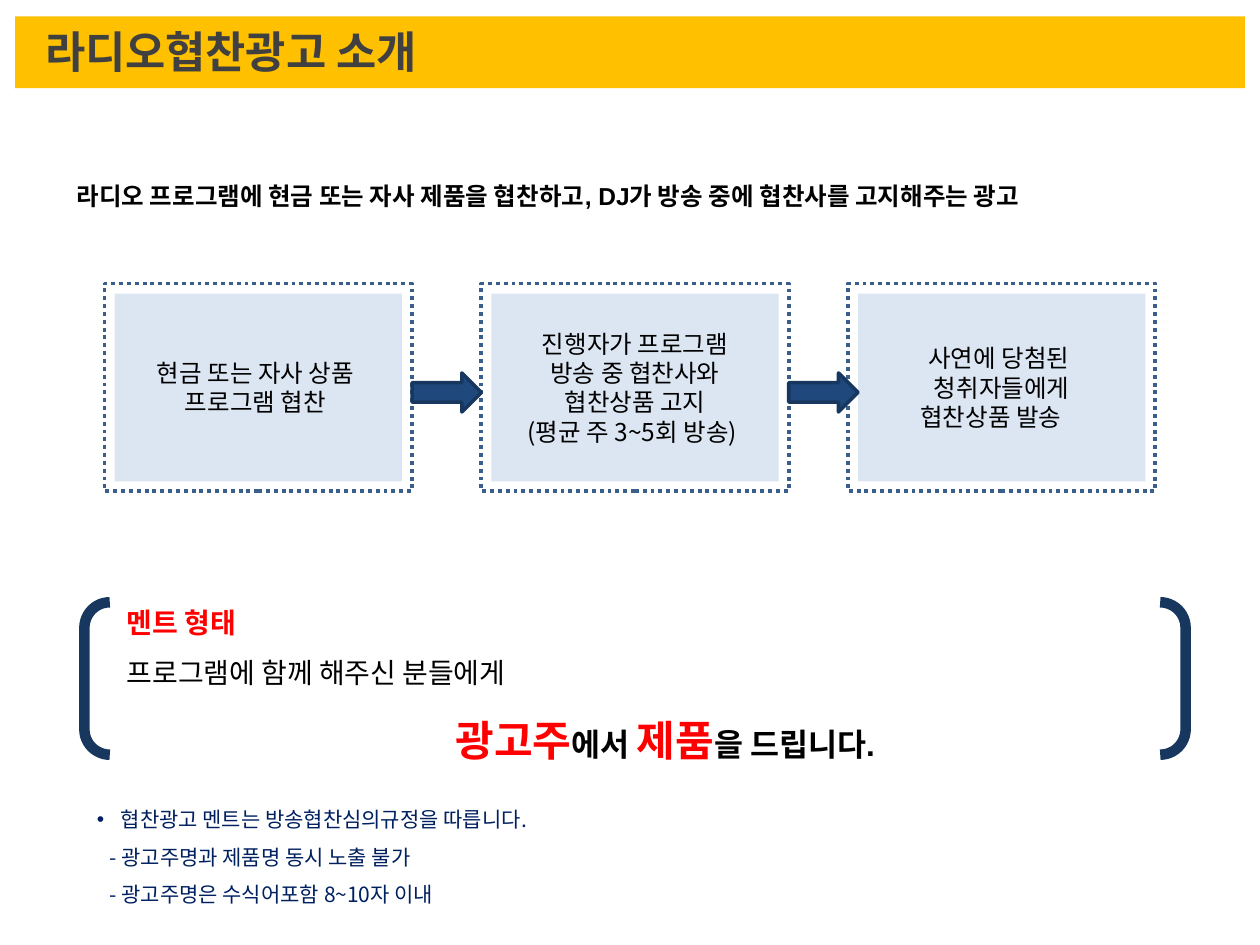
from pptx import Presentation, util as u
from pptx.dml.color import RGBColor
from pptx.enum import dml, shapes, text
from pptx.oxml import parse_xml
from pptx.oxml.ns import nsdecls

CELL = u.Inches(0.1)  # the slide is a grid of 100 columns by 75 rows
KOREAN, LATIN = "Noto Sans CJK KR", "Arial"
color = RGBColor.from_string

deck = Presentation()
deck.slide_width, deck.slide_height = 100 * CELL, 75 * CELL
slide = deck.slides.add_slide(deck.slide_layouts[6])


def add_block(kind, area, fill=None, line=None, width=1):
    block = slide.shapes.add_shape(kind, *[round(n * CELL) for n in area])
    block.shadow.inherit = False
    if fill:
        block.fill.solid()
        block.fill.fore_color.rgb = color(fill)
    else:
        block.fill.background()
    if line:
        block.line.color.rgb = color(line)
        block.line.width = u.Pt(width)
    else:
        block.line.fill.background()
    return block


def write(frame, lines, font=KOREAN, align="LEFT", spacing=None):
    """Each line is a list of runs: (words, size, colour, bold)."""
    frame.word_wrap = True
    for i, runs in enumerate(lines):
        line = frame.paragraphs[0] if i == 0 else frame.add_paragraph()
        line.alignment = getattr(text.PP_ALIGN, align)
        line.line_spacing = spacing
        for words, size, hue, bold in runs:
            run = line.add_run()
            run.text = words
            run.font.size, run.font.bold = u.Pt(size), bold
            run.font.color.rgb = color(hue)
            run.font.name = font
            run.font._element.append(
                parse_xml(f'<a:ea {nsdecls("a")} typeface="{KOREAN}"/>'))
    return frame.paragraphs


# Title bar
add_block(shapes.MSO_SHAPE.RECTANGLE, (1.2, 1.3, 97.6, 5.7), "FFC000")
title = slide.shapes.add_textbox(*[round(n * CELL) for n in (1.6, 1.5, 79.5, 5.2)])
title_line = write(title.text_frame, [[("라디오협찬광고 소개", 25, "404040", True)]])[0]
title_line._p.get_or_add_pPr().set("marL", str(CELL))

# Three steps, each a panel inside a dotted frame
STEP_TOP, STEP_WIDTH, STEP_HEIGHT, INSET = 22.5, 24.4, 16.5, 0.8
steps = [
    (8.3, ["현금 또는 자사 상품 ", "프로그램 협찬 "]),
    (38.2, ["진행자가 프로그램", "방송 중 협찬사와", "협찬상품 고지",
            "(평균 주 3~5회 방송) "]),
    (67.3, ["사연에 당첨된 ", "청취자들에게", "협찬상품 발송"]),
]
for left, words in steps:
    panel = add_block(
        shapes.MSO_SHAPE.RECTANGLE,
        (left + INSET, STEP_TOP + INSET, STEP_WIDTH - 2 * INSET, STEP_HEIGHT - 2 * INSET),
        "DCE6F2")
    panel.text_frame.vertical_anchor = text.MSO_ANCHOR.MIDDLE
    step_lines = write(panel.text_frame, [[(w, 14, "000000", False)] for w in words],
                       align="CENTER")
    border = add_block(shapes.MSO_SHAPE.RECTANGLE,
                       (left, STEP_TOP, STEP_WIDTH, STEP_HEIGHT), None, "3A5F8C", 2.25)
    border.line.dash_style = dml.MSO_LINE.ROUND_DOT
# The last line of the last step sits a little left of centre
step_lines[-1]._p.get_or_add_pPr().set("marR", str(round(1.7 * CELL)))

# Arrows between the steps
for left, _ in steps[:-1]:
    add_block(shapes.MSO_SHAPE.RIGHT_ARROW, (left + STEP_WIDTH, 29.6, 5.5, 3.1),
              "1F497D", "17375E", 2)

# Announcement wording between brackets
ment = slide.shapes.add_textbox(*[round(n * CELL) for n in (9.1, 46.2, 82.7, 15.1)])
ment_lines = write(ment.text_frame, [
    [("멘트 형태", 16, "FF0000", True)],
    [("프로그램에 함께 해주신 분들에게", 16, "000000", False)],
    [("광고주", 24, "FF0000", True), ("에서 ", 18, "000000", True),
     ("제품", 24, "FF0000", True), ("을 드립니다.", 18, "000000", True)],
], LATIN, spacing=1.5)
ment_lines[2].alignment = text.PP_ALIGN.CENTER
ment_lines[2]._p.get_or_add_pPr().set("marL", str(round(4.7 * CELL)))
add_block(shapes.MSO_SHAPE.DOUBLE_BRACKET, (6.7, 47.8, 87.4, 12.1), None, "17375E", 6)

# Definition
definition = slide.shapes.add_textbox(*[round(n * CELL) for n in (5.1, 13.9, 92.1, 3.4)])
write(definition.text_frame, [[(
    "라디오 프로그램에 현금 또는 자사 제품을 협찬하고, DJ가 방송 중에 협찬사를 고지해주는 광고",
    14, "000000", True)]], LATIN)

# Rules: one bullet with two indented lines
rules = slide.shapes.add_textbox(*[round(n * CELL) for n in (6.7, 62.5, 49.8, 3.8)])
rule_lines = write(rules.text_frame, [[(words, 12, "002060", False)] for words in (
    "협찬광고 멘트는 방송협찬심의규정을 따릅니다.",
    "- 광고주명과 제품명 동시 노출 불가",
    "- 광고주명은 수식어포함 8~10자 이내",
)], spacing=1.5)
for line, margin, indent in zip(rule_lines, (1.9, 1, 1), (-1.9, 0, 0)):
    props = line._p.get_or_add_pPr()
    props.set("marL", str(round(margin * CELL)))
    props.set("indent", str(round(indent * CELL)))
bullet = rule_lines[0]._p.get_or_add_pPr()
bullet.append(parse_xml(f'<a:buFont {nsdecls("a")} typeface="{LATIN}"/>'))
bullet.append(parse_xml(f'<a:buChar {nsdecls("a")} char="•"/>'))

deck.save("out.pptx")
